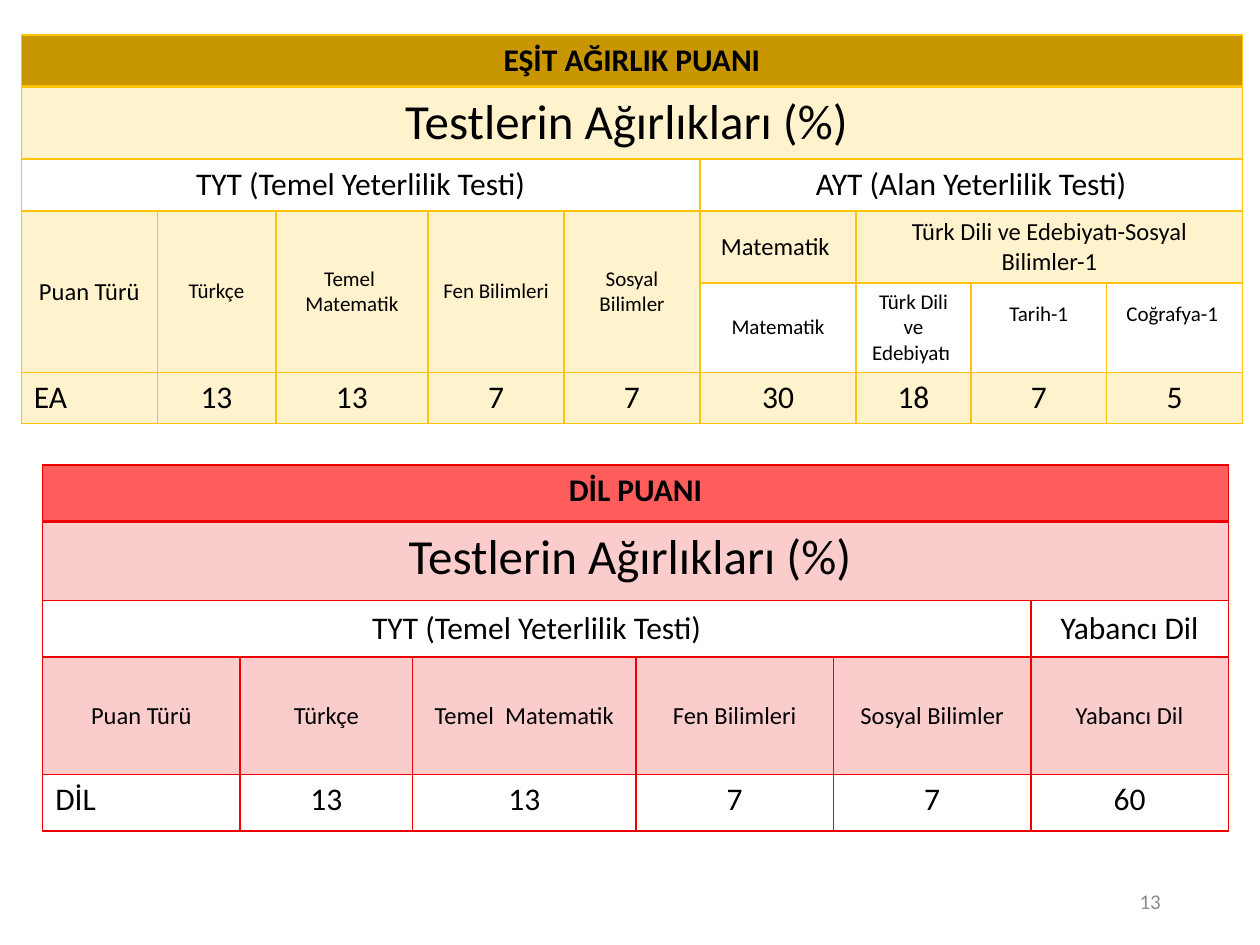
"""Build a slide with the test weights of two score types."""
from lxml import etree
from pptx import Presentation
from pptx.dml.color import RGBColor
from pptx.enum.text import MSO_ANCHOR, PP_ALIGN
from pptx.oxml.ns import qn
from pptx.util import Cm, Pt

LEFT, CENTER, RIGHT = PP_ALIGN.LEFT, PP_ALIGN.CENTER, PP_ALIGN.RIGHT
TOP, MIDDLE = MSO_ANCHOR.TOP, MSO_ANCHOR.MIDDLE
BLANK_LAYOUT = 6

THEME = {
    "font": "Calibri", "ink": "000000", "muted": "8C8C8C", "tint": 20000,
    "line": 1, "header_line": 2, "number": 12,
    "styles": {
        "header": {"size": 18, "bold": True, "anchor": TOP},
        "title": {"size": 28, "anchor": TOP},
        "group": {"size": 18, "anchor": MIDDLE},
        "label": {"size": 14, "anchor": MIDDLE},
        "small": {"size": 12, "anchor": MIDDLE},
        "raised": {"size": 12, "anchor": MIDDLE, "margin_bottom": 0.66},
        "name": {"size": 18, "anchor": TOP, "align": LEFT},
        "value": {"size": 18, "anchor": TOP},
    },
}

# Each cell: text, style, fill kind, and optional row and column spans.
WEIGHTS = "Testlerin Ağırlıkları (%) "
BASIC = "TYT (Temel Yeterlilik Testi)"
SUBJECTS = ["Türkçe", "Temel  Matematik", "Fen Bilimleri", "Sosyal Bilimler"]


def score_row(name, values, fill):
    """Return the cells of a score type's row."""
    return [(name, "name", fill)] + [(str(value), "value", fill) for value in values]


TABLES = [
    {
        "accent": "EF0000", "header": "FF5C5C", "left": 0.86, "top": 9.37,
        "columns": [3.98, 3.48, 4.5, 3.98, 3.98, 3.98],
        "heights": [1.14, 1.6, 1.14, 2.36, 1.14],
        "rows": [
            [("DİL PUANI", "header", "header", 1, 6)],
            [(WEIGHTS, "title", "tint", 1, 6)],
            [(BASIC, "group", None, 1, 5), ("Yabancı Dil", "group", None)],
            [(text, "label", "tint") for text in ["Puan Türü", *SUBJECTS, "Yabancı Dil"]],
            score_row("DİL", [13, 13, 7, 7, 60], None),
        ],
    },
    {
        "accent": "FFC30B", "header": "C89600", "left": 0.43, "top": 0.71,
        "columns": [2.74, 2.39, 3.07, 2.74, 2.74, 3.15, 2.31, 2.74, 2.74],
        "heights": [1.02, 1.47, 1.04, 1.45, 1.8, 1.02],
        "rows": [
            [("EŞİT AĞIRLIK PUANI", "header", "header", 1, 9)],
            [(WEIGHTS, "title", "tint", 1, 9)],
            [(BASIC, "group", None, 1, 5), ("AYT (Alan Yeterlilik Testi)", "group", None, 1, 4)],
            [("Puan Türü", "label", "tint", 2, 1)]
            + [(text, "small", "tint", 2, 1) for text in SUBJECTS]
            + [("Matematik ", "label", "tint"),
               ("Türk Dili ve Edebiyatı-Sosyal Bilimler-1", "label", "tint", 1, 3)],
            [("Matematik", "small", None), ("Türk Dili ve Edebiyatı ", "small", None),
             ("Tarih-1", "raised", None), ("Coğrafya-1 ", "raised", None)],
            score_row("EA", [13, 13, 7, 7, 30, 18, 7, 5], "tint"),
        ],
    },
]
NUMBER = {"text": "13", "box": (17.93, 17.65, 5.72, 1.02)}


def write(frame, text, size, color, align=CENTER, bold=False):
    """Put one formatted paragraph into a text frame."""
    para = frame.paragraphs[0]
    para.alignment = align
    span = para.add_run()
    span.text = text
    formats = {"name": THEME["font"], "size": Pt(size), "bold": bold}
    for key, value in formats.items():
        setattr(span.font, key, value)
    span.font.color.rgb = RGBColor.from_string(color)


def paint(cell, kind, data):
    """Give a cell its solid, tinted or empty fill."""
    if kind is None:
        cell.fill.background()
        return
    cell.fill.solid()
    color = data["header"] if kind == "header" else data["accent"]
    cell.fill.fore_color.rgb = RGBColor.from_string(color)
    if kind == "tint":
        node = cell._tc.tcPr.find(".//" + qn("a:srgbClr"))
        etree.SubElement(node, qn("a:alpha"), val=str(THEME["tint"]))


def outline(cell, color, widths):
    """Draw the four borders of a cell."""
    properties = cell._tc.get_or_add_tcPr()
    for place, (side, width) in enumerate(widths.items()):
        line = etree.Element(qn("a:ln" + side), w=str(Pt(width)))
        fill = etree.SubElement(line, qn("a:solidFill"))
        etree.SubElement(fill, qn("a:srgbClr"), val=color)
        properties.insert(place, line)


def add_score_table(page, data):
    """Add one table, placing every cell in the next free column."""
    columns, heights = data["columns"], data["heights"]
    table = page.shapes.add_table(
        len(heights), len(columns), Cm(data["left"]), Cm(data["top"]),
        Cm(sum(columns)), Cm(sum(heights))).table
    table.first_row = table.horz_banding = False
    for column, width in zip(table.columns, columns):
        column.width = Cm(width)
    for row, height in zip(table.rows, heights):
        row.height = Cm(height)

    taken = set()
    for row, cells in enumerate(data["rows"]):
        for text, style_name, kind, *spans in cells:
            down, across = spans or (1, 1)
            column = next(c for c in range(len(columns)) if (row, c) not in taken)
            area = [(r, c) for r in range(row, row + down) for c in range(column, column + across)]
            taken.update(area)
            cell = table.cell(row, column)
            if len(area) > 1:
                cell.merge(table.cell(*area[-1]))
            widths = dict.fromkeys("LRTB", THEME["line"])
            if kind == "header":
                widths["B"] = THEME["header_line"]
            for position in area:
                paint(table.cell(*position), kind, data)
                outline(table.cell(*position), data["accent"], widths)
            style = THEME["styles"][style_name]
            cell.vertical_anchor = style["anchor"]
            if "margin_bottom" in style:
                cell.margin_bottom = Cm(style["margin_bottom"])
            write(cell.text_frame, text, style["size"], THEME["ink"],
                  style.get("align", CENTER), style.get("bold", False))


def main():
    """Assemble and save the deck."""
    deck = Presentation()
    deck.slide_width, deck.slide_height = Cm(25.4), Cm(19.05)
    page = deck.slides.add_slide(deck.slide_layouts[BLANK_LAYOUT])
    for data in TABLES:
        add_score_table(page, data)
    box = page.shapes.add_textbox(*map(Cm, NUMBER["box"]))
    box.text_frame.word_wrap = True
    box.text_frame.vertical_anchor = MIDDLE
    write(box.text_frame, NUMBER["text"], THEME["number"], THEME["muted"], RIGHT)
    deck.save("out.pptx")


if __name__ == "__main__":
    main()
